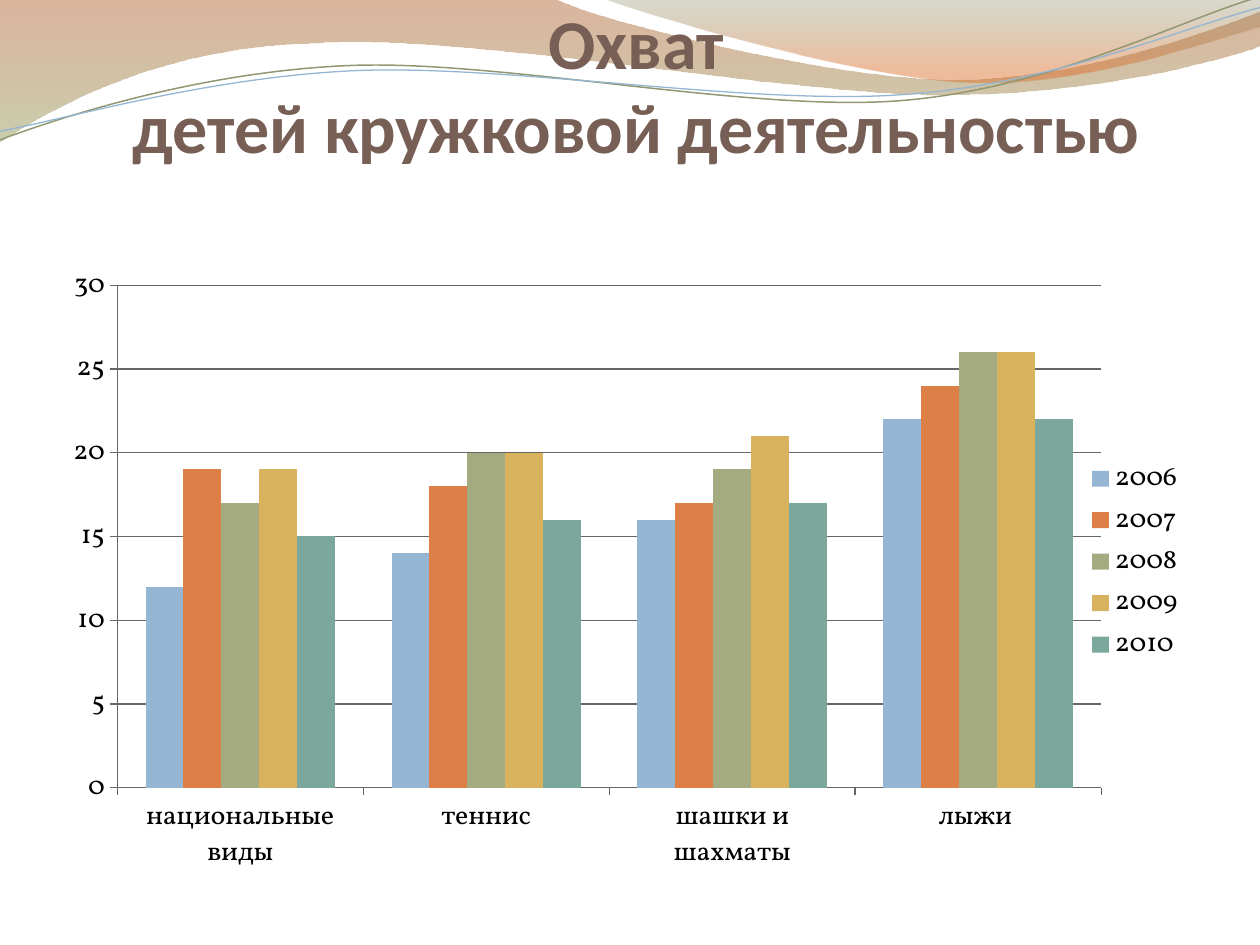
from dataclasses import dataclass
from math import cos, radians, sin

from lxml.etree import SubElement
from pptx import Presentation
from pptx.chart.data import CategoryChartData
from pptx.dml.color import RGBColor
from pptx.enum.chart import XL_CHART_TYPE, XL_LEGEND_POSITION, XL_TICK_MARK
from pptx.enum.text import MSO_ANCHOR, PP_ALIGN
from pptx.oxml.ns import qn
from pptx.util import Inches, Pt


@dataclass(frozen=True)
class Theme:
    title_font: str = "Calibri"
    chart_font: str = "Vollkorn"
    title_size: int = 40
    chart_size: int = 16
    title: str = "775F55"
    text: str = "000000"
    grid: str = "666666"
    olive: str = "929772"
    blue: str = "94B6D2"
    series: tuple = ("94B6D2", "DD8047", "A5AB81", "D8B25C", "7BA79D")
    # Gradient stops: position, colour, opacity in percent
    left_band: tuple = ((0, "AF5C29", 45), (1, "9DA66B", 55))
    right_band: tuple = ((0, "7D835B", 30), (0.8, "DD6B24", 45))


THEME = Theme()
WAVE_TILT = -2.7

# One point is a straight segment's end; three points are a cubic curve.
LEFT_BAND = [
    [(0, 0)], [(4.4, -0.01)],
    [(4.76, 0.17), (6.64, 0.63), (7.58, 0.63)],
    [(8.53, 0.63), (9.58, 0.26), (10, 0.09)],
    [(10.01, 0.36)],
    [(9.83, 0.44), (8.7, 0.76), (7.46, 0.75)],
    [(6.22, 0.75), (3.82, 0.28), (2.57, 0.34)],
    [(1.29, 0.36), (0.46, 0.83), (-0.01, 1.13)],
    [(0, 0)],
]
RIGHT_BAND = [
    [(4.79, -0.01)],
    [(5.09, 0.11), (6.82, 0.62), (7.69, 0.65)],
    [(8.56, 0.69), (9.61, 0.32), (10, 0.21)],
    [(10, 0)], [(4.79, -0.01)],
]
OLIVE_WAVE = [
    [(0, 1.11)],
    [(0.48, 0.93), (1.58, 0.57), (2.77, 0.52)],
    [(3.95, 0.47), (5.93, 0.89), (7.13, 0.8)],
    [(8.33, 0.71), (9.38, 0.15), (9.98, -0.02)],
]
BLUE_WAVE = [
    [(0, 1.04)],
    [(0.47, 0.96), (1.64, 0.61), (2.83, 0.56)],
    [(4.03, 0.51), (5.97, 0.84), (7.17, 0.75)],
    [(8.36, 0.67), (9.41, 0.21), (10, 0.06)],
]

CATEGORIES = ["национальные виды", "теннис", "шашки и шахматы", "лыжи "]
CHILDREN_BY_YEAR = {
    "2006": (12, 14, 16, 22),
    "2007": (19, 18, 17, 24),
    "2008": (17, 20, 19, 26),
    "2009": (19, 20, 21, 26),
    "2010": (15, 16, 17, 22),
}


def color(value):
    return RGBColor.from_string(value)


def turn(segments, center, degrees):
    cosine, sine = cos(radians(degrees)), sin(radians(degrees))
    center_x, center_y = center
    return [[(center_x + (x - center_x) * cosine - (y - center_y) * sine,
              center_y + (x - center_x) * sine + (y - center_y) * cosine)
             for x, y in segment] for segment in segments]


def add_outline(page, segments, close):
    """Draw the control points as a freeform, then bend each triple into a curve."""
    start, *others = [(Inches(x), Inches(y)) for segment in segments for x, y in segment]
    builder = page.shapes.build_freeform(*start)
    builder.add_line_segments(others, close=close)
    shape = builder.convert_to_shape()
    shape.shadow.inherit = False
    lines = iter(list(shape.element.iter(qn("a:lnTo"))))
    for segment in segments[1:]:
        first, *rest = [next(lines) for _ in segment]
        if rest:
            first.tag = qn("a:cubicBezTo")
            for line in rest:
                first.append(line[0])
                line.getparent().remove(line)
    return shape


def add_band(page, segments, stops):
    band = add_outline(page, segments, close=True)
    band.line.fill.background()
    band.fill.gradient()
    band.fill.gradient_angle = 270
    for stop, (position, value, _) in zip(band.fill.gradient_stops, stops):
        stop.position = position
        stop.color.rgb = color(value)
    for node, (_, _, opacity) in zip(band.element.iter(qn("a:srgbClr")), stops):
        SubElement(node, qn("a:alpha")).set("val", str(opacity * 1000))


def add_wave(page, segments, center, value, width):
    """Draw the wave level, then tilt it into place."""
    wave = add_outline(page, turn(segments, center, -WAVE_TILT), close=False)
    wave.rotation = WAVE_TILT
    wave.fill.background()
    wave.line.color.rgb = color(value)
    wave.line.width = Pt(width)


def add_header_waves(page):
    add_band(page, LEFT_BAND, THEME.left_band)
    add_band(page, RIGHT_BAND, THEME.right_band)
    add_wave(page, OLIVE_WAVE, (4.99, 0.58), THEME.olive, 0.85)
    add_wave(page, BLUE_WAVE, (4.99, 0.59), THEME.blue, 0.75)


def add_title(page, left, top, width, height):
    box = page.shapes.add_textbox(left, top, width, height)
    frame = box.text_frame
    frame.word_wrap = True
    frame.vertical_anchor = MSO_ANCHOR.BOTTOM
    frame.margin_left = frame.margin_right = frame.margin_bottom = 0
    frame.margin_top = Inches(0.05)
    frame.text = "Охват\v детей кружковой деятельностью "
    para = frame.paragraphs[0]
    para.alignment = PP_ALIGN.CENTER
    for span in para.runs:
        span.font.name = THEME.title_font
        span.font.size = Pt(THEME.title_size)
        span.font.bold = True
        span.font.color.rgb = color(THEME.title)


def place_plot(chart, **fractions):
    """Fix the inner plot area as fractions of the chart."""
    plot_area = chart.element.find(".//" + qn("c:plotArea"))
    layout = plot_area.find(qn("c:layout"))
    if layout is None:
        layout = SubElement(plot_area, qn("c:layout"))
        plot_area.insert(0, layout)
    manual = SubElement(layout, qn("c:manualLayout"))
    settings = {"layoutTarget": "inner", "xMode": "edge", "yMode": "edge", **fractions}
    for name, value in settings.items():
        SubElement(manual, qn("c:" + name)).set("val", str(value))


def add_attendance_chart(page, left, top, width, height):
    data = CategoryChartData()
    data.categories = CATEGORIES
    for year, children in CHILDREN_BY_YEAR.items():
        data.add_series(year, children)
    chart = page.shapes.add_chart(
        XL_CHART_TYPE.COLUMN_CLUSTERED, left, top, width, height, data).chart
    chart.has_title = False
    chart.font.name = THEME.chart_font
    chart.font.size = Pt(THEME.chart_size)
    chart.font.color.rgb = color(THEME.text)
    chart.has_legend = True
    chart.legend.position = XL_LEGEND_POSITION.RIGHT
    chart.legend.include_in_layout = False
    place_plot(chart, x=Inches(0.43) / width, y=Inches(0.09) / height,
               w=Inches(7.81) / width, h=Inches(4.2) / height)

    plot = chart.plots[0]
    plot.gap_width = 150
    plot.vary_by_categories = False
    for series, value in zip(plot.series, THEME.series):
        series.format.fill.solid()
        series.format.fill.fore_color.rgb = color(value)

    value_axis = chart.value_axis
    value_axis.minimum_scale, value_axis.maximum_scale = 0, 30
    value_axis.major_unit = 5
    value_axis.has_major_gridlines = True
    value_axis.major_gridlines.format.line.color.rgb = color(THEME.grid)
    for axis in (chart.category_axis, value_axis):
        axis.major_tick_mark = XL_TICK_MARK.OUTSIDE
        axis.format.line.color.rgb = color(THEME.grid)


def main():
    deck = Presentation()
    deck.slide_width, deck.slide_height = Inches(10), Inches(7.5)
    page = deck.slides.add_slide(deck.slide_layouts[6])
    add_header_waves(page)
    add_title(page, Inches(0.55), Inches(0.39), Inches(9), Inches(0.94))
    add_attendance_chart(page, Inches(0.5), Inches(2.12), Inches(9), Inches(4.8))
    deck.save("out.pptx")


if __name__ == "__main__":
    main()
